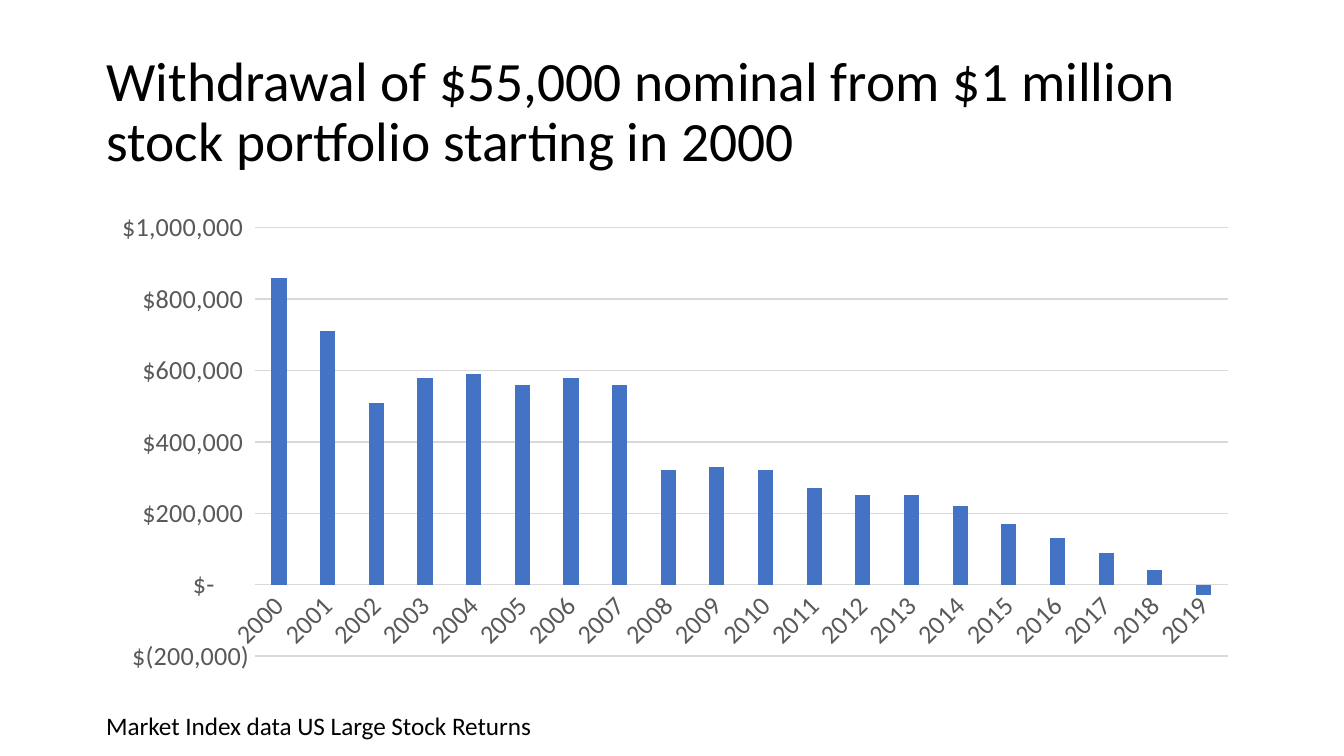
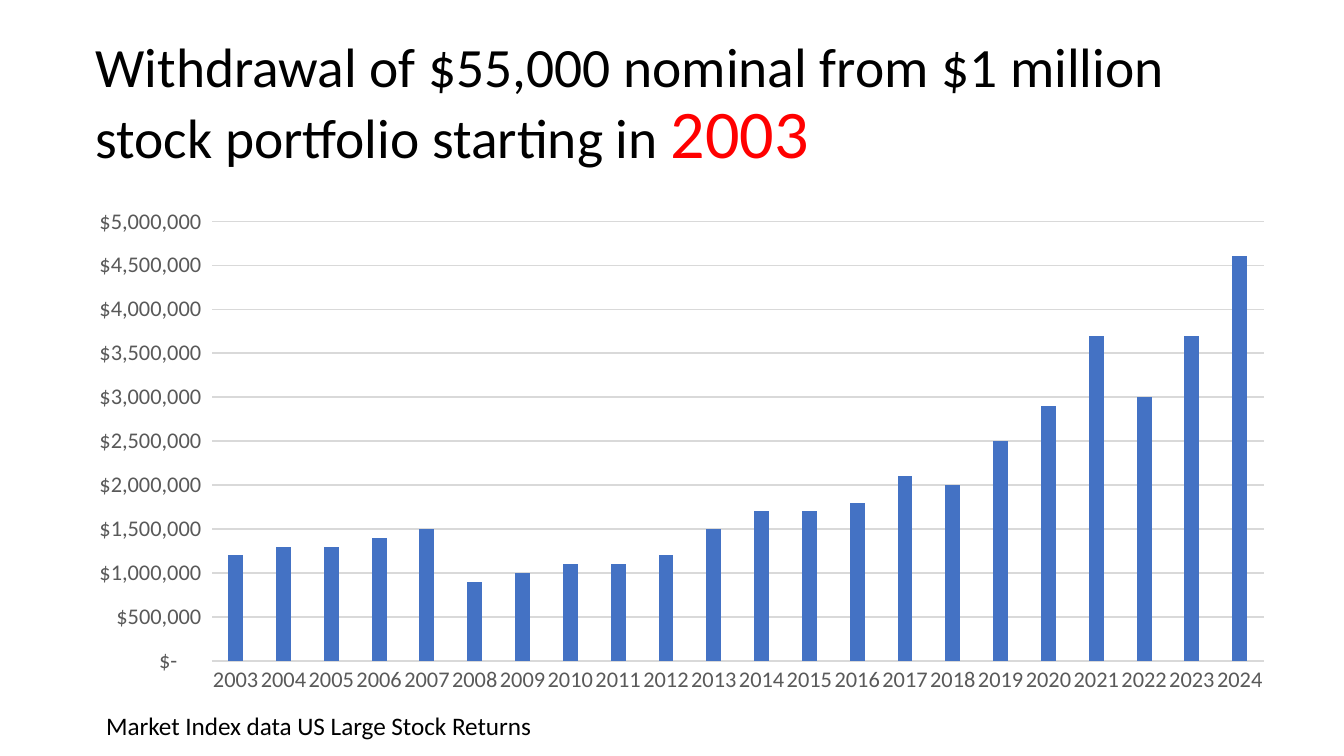
from dataclasses import dataclass

from pptx import Presentation
from pptx.chart.data import CategoryChartData
from pptx.dml.color import RGBColor
from pptx.enum.chart import XL_CHART_TYPE as ChartType, XL_TICK_MARK as TickMark
from pptx.enum.text import MSO_ANCHOR as Anchor, MSO_AUTO_SIZE as AutoSize, PP_ALIGN as Align
from pptx.util import Pt

EMU_PER_PX = 914400 / 134.4
TITLE_ONLY = 5


@dataclass(frozen=True)
class Theme:
    """Colours, font and type sizes shared by the slides."""
    font: str = "Calibri"
    ink: str = "000000"
    accent: str = "FF0000"
    bar: str = "4472C4"
    grid: str = "D9D9D9"
    axis_text: str = "595959"
    title_size: float = 29.7
    accent_size: float = 36.5
    source_size: float = 13.5
    grid_width: float = 0.75
    dollars: str = '_("$"* #,##0_);_("$"* \\(#,##0\\);_("$"* "-"??_);_(@_)'


THEME = Theme()
HEADLINE = "Withdrawal of $55,000 nominal from $1 million stock portfolio starting in "
SOURCE = "Market Index data US Large Stock Returns"
SOURCE_BOX = (93, 704, 452, 44)

BALANCES_FROM_2000 = [860, 710, 510, 580, 590, 560, 580, 560, 320, 330,
                      320, 270, 250, 250, 220, 170, 130, 90, 40, -30]
BALANCES_FROM_2003 = [1200, 1300, 1300, 1400, 1500, 900, 1000, 1100, 1100, 1200, 1500,
                      1700, 1700, 1800, 2100, 2000, 2500, 2900, 3700, 3000, 3700, 4600]


def px(*lengths):
    """Turn pixel lengths into EMU."""
    return [round(length * EMU_PER_PX) for length in lengths]


def style_font(font, size, color):
    """Set the theme font with a size and colour."""
    font.name = THEME.font
    font.size = Pt(size)
    font.color.rgb = RGBColor.from_string(color)


def style_line(line):
    """Draw a line as a thin grid line."""
    line.color.rgb = RGBColor.from_string(THEME.grid)
    line.width = Pt(THEME.grid_width)


def write_text(shape, runs, *, anchor=Anchor.TOP, fit=AutoSize.NONE, spacing=None):
    """Fill a shape with one left-aligned paragraph of (text, size, colour) runs."""
    frame = shape.text_frame
    frame.word_wrap = True
    frame.auto_size = fit
    frame.vertical_anchor = anchor
    paragraph = frame.paragraphs[0]
    paragraph.alignment = Align.LEFT
    paragraph.line_spacing = spacing
    for text, size, color in runs:
        run = paragraph.add_run()
        run.text = text
        style_font(run.font, size, color)


def add_title(slide, box, year, *, size, color):
    """Place the headline, ending in the starting year."""
    title = slide.shapes.title
    title.left, title.top, title.width, title.height = px(*box)
    runs = [(HEADLINE, THEME.title_size, THEME.ink), (str(year), size, color)]
    write_text(title, runs, anchor=Anchor.MIDDLE, spacing=0.9)


def add_source(slide):
    """Add the data source line at the foot of the slide."""
    source = slide.shapes.add_textbox(*px(*SOURCE_BOX))
    write_text(source, [(SOURCE, THEME.source_size, THEME.ink)], fit=AutoSize.SHAPE_TO_FIT_TEXT)


def style_axis(axis, size):
    """Remove tick marks and format the labels of an axis."""
    axis.major_tick_mark = axis.minor_tick_mark = TickMark.NONE
    style_font(axis.tick_labels.font, size, THEME.axis_text)


def add_balances(slide, box, first_year, balances, *, size, scale):
    """Chart year-end balances, given in thousands, as columns."""
    data = CategoryChartData(number_format=THEME.dollars)
    data.categories = [str(first_year + offset) for offset in range(len(balances))]
    data.add_series("Series 1", [balance * 1000 for balance in balances])
    chart = slide.shapes.add_chart(ChartType.COLUMN_CLUSTERED, *px(*box), data).chart
    chart.has_legend = chart.has_title = False
    style_font(chart.font, size, THEME.ink)

    columns = chart.plots[0]
    columns.gap_width, columns.overlap = 219, -27
    columns.vary_by_categories = False
    balance_series = columns.series[0]
    balance_series.invert_if_negative = False
    balance_series.format.fill.solid()
    balance_series.format.fill.fore_color.rgb = RGBColor.from_string(THEME.bar)

    years, dollars = chart.category_axis, chart.value_axis
    style_axis(years, size)
    style_line(years.format.line)
    label_body = years._element.txPr.bodyPr
    label_body.set("rot", "-60000000")
    label_body.set("vert", "horz")

    style_axis(dollars, size)
    dollars.format.line.fill.background()
    dollars.has_major_gridlines = True
    style_line(dollars.major_gridlines.format.line)
    dollars.minimum_scale, dollars.maximum_scale, dollars.major_unit = scale
    dollars.tick_labels.number_format = THEME.dollars
    dollars.tick_labels.number_format_is_linked = False


def main():
    """Build both withdrawal slides."""
    deck = Presentation()
    deck.slide_width, deck.slide_height = px(1344, 756)
    layout = deck.slide_layouts[TITLE_ONLY]

    early = deck.slides.add_slide(layout)
    add_title(early, (93, 40, 1158, 147), 2000, size=THEME.title_size, color=THEME.ink)
    add_balances(early, (93, 202, 1158, 480), 2000, BALANCES_FROM_2000,
                 size=14, scale=(-200_000, 1_000_000, 200_000))
    add_source(early)

    late = deck.slides.add_slide(layout)
    add_title(late, (82, 27, 1169, 159), 2003, size=THEME.accent_size, color=THEME.accent)
    add_source(late)
    add_balances(late, (70, 198, 1218, 505), 2003, BALANCES_FROM_2003,
                 size=12, scale=(0, 5_000_000, 500_000))

    deck.save("out.pptx")


if __name__ == "__main__":
    main()
